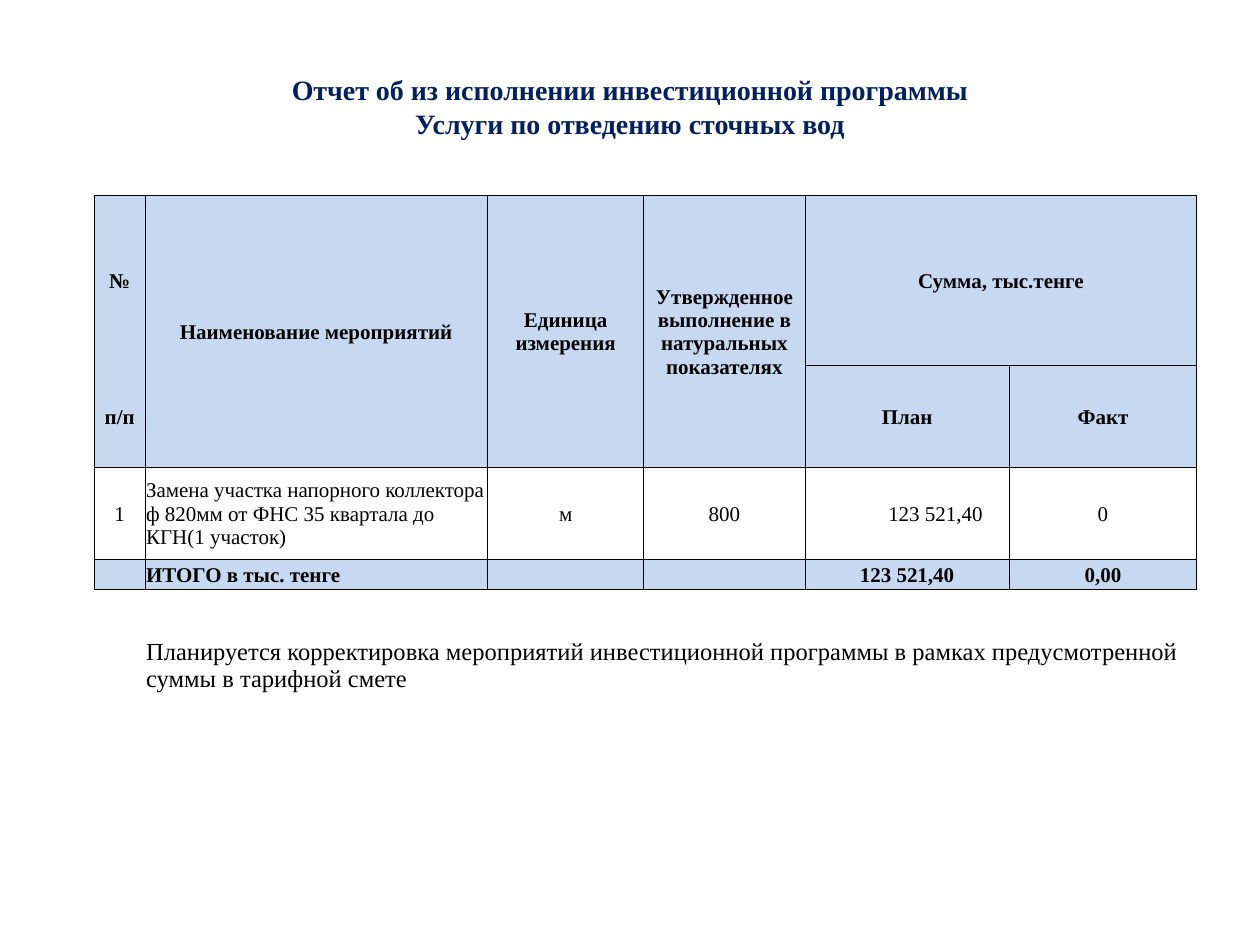
import pptx
import pptx.util
import pptx.dml.color
import pptx.enum.text
import pptx.oxml
import pptx.oxml.ns
import lxml.etree

Inches = pptx.util.Inches
Pt = pptx.util.Pt
RGBColor = pptx.dml.color.RGBColor
PP_ALIGN = pptx.enum.text.PP_ALIGN
MIDDLE = pptx.enum.text.MSO_ANCHOR.MIDDLE
qn = pptx.oxml.ns.qn

NAVY = RGBColor(0x00, 0x20, 0x60)
BLACK = RGBColor(0x00, 0x00, 0x00)
PALE_BLUE = RGBColor(0xC6, 0xD9, 0xF1)
WHITE = RGBColor(0xFF, 0xFF, 0xFF)
FONT = "Times New Roman"


def format_text(text_frame, size, color, bold, alignment):
    for paragraph in text_frame.paragraphs:
        paragraph.alignment = alignment
        for run in paragraph.runs:
            run.font.name = FONT
            run.font.size = Pt(size)
            run.font.bold = bold
            run.font.color.rgb = color
        if not paragraph.runs:
            end = lxml.etree.SubElement(paragraph._p, qn("a:endParaRPr"))
            end.set("sz", str(size * 100))


def set_borders(cell, sides):
    properties = cell._tc.get_or_add_tcPr()
    for position, side in enumerate("LRTB"):
        line = lxml.etree.Element(qn(f"a:ln{side}"))
        if side in sides:
            line.set("w", str(Pt(0.5)))
            fill = lxml.etree.SubElement(line, qn("a:solidFill"))
            lxml.etree.SubElement(fill, qn("a:srgbClr")).set("val", str(BLACK))
        else:
            line.set("w", "0")
            lxml.etree.SubElement(line, qn("a:noFill"))
        properties.insert(position, line)


presentation = pptx.Presentation()
presentation.slide_width = Inches(10)
presentation.slide_height = Inches(7.5)
slide = presentation.slides.add_slide(presentation.slide_layouts[6])

title = slide.shapes.add_textbox(Inches(0.5), Inches(0.3), Inches(9), Inches(1.09))
title.text_frame.word_wrap = True
title.text_frame.vertical_anchor = MIDDLE
title.text_frame.text = (
    "Отчет об из исполнении инвестиционной программы\vУслуги по отведению сточных вод"
)
format_text(title.text_frame, 16, NAVY, True, PP_ALIGN.CENTER)

column_widths = [0.4, 2.72, 1.24, 1.28, 1.62, 1.49]
row_heights = [1.35, 0.75, 0.73] + [0.24] * 5
rows = [
    ["№", "Наименование мероприятий", "Единица измерения",
     "Утвержденное выполнение в натуральных показателях", "Сумма, тыс.тенге", ""],
    ["п/п", "", "", "", "План", "Факт"],
    ["1", "Замена участка напорного коллектора ф 820мм от ФНС 35 квартала до КГН(1 участок)",
     "м", "800", "123 521,40", "0"],
    ["", "ИТОГО в тыс. тенге", "", "", "123 521,40", "0,00"],
    [""] * 6,
    ["", "Планируется корректировка мероприятий инвестиционной программы "
     "в рамках предусмотренной суммы в тарифной смете", "", "", "", ""],
    [""] * 6,
    [""] * 6,
]
header_rows = 2
total_row = 3
note_row = 5

table = slide.shapes.add_table(
    len(rows), len(column_widths), Inches(0.75), Inches(1.55),
    Inches(sum(column_widths)), Inches(sum(row_heights)),
).table
table.first_row = False
table.horz_banding = False
for column, width in zip(table.columns, column_widths):
    column.width = Inches(width)
for row, height in zip(table.rows, row_heights):
    row.height = Inches(height)

for row_index, row in enumerate(rows):
    for column_index, text in enumerate(row):
        cell = table.cell(row_index, column_index)
        cell.margin_left = cell.margin_right = cell.margin_top = Inches(0.01)
        cell.margin_bottom = 0
        cell.vertical_anchor = MIDDLE
        shaded = row_index < header_rows or row_index == total_row
        if row_index > total_row:
            cell.fill.background()
        else:
            cell.fill.solid()
            cell.fill.fore_color.rgb = PALE_BLUE if shaded else WHITE
        sides = "LRTB" if row_index <= total_row else ""
        if row_index == total_row + 1:
            sides = "T"
        if column_index == 0 and row_index < header_rows:
            sides = "LRT" if row_index == 0 else "LRB"
        set_borders(cell, sides)
        left_aligned = column_index == 1 and row_index >= header_rows
        cell.text_frame.text = text
        format_text(
            cell.text_frame, 14 if row_index == note_row and text else 12, BLACK, shaded,
            PP_ALIGN.LEFT if left_aligned else PP_ALIGN.CENTER,
        )

plan_cell = table.cell(2, 4)
plan_cell.margin_right = Inches(0.21)
plan_cell.text_frame.paragraphs[0].alignment = PP_ALIGN.RIGHT

for column_index in range(1, 4):
    table.cell(0, column_index).merge(table.cell(1, column_index))
table.cell(0, 4).merge(table.cell(0, 5))
table.cell(note_row, 1).merge(table.cell(7, 5))

presentation.save("out.pptx")
